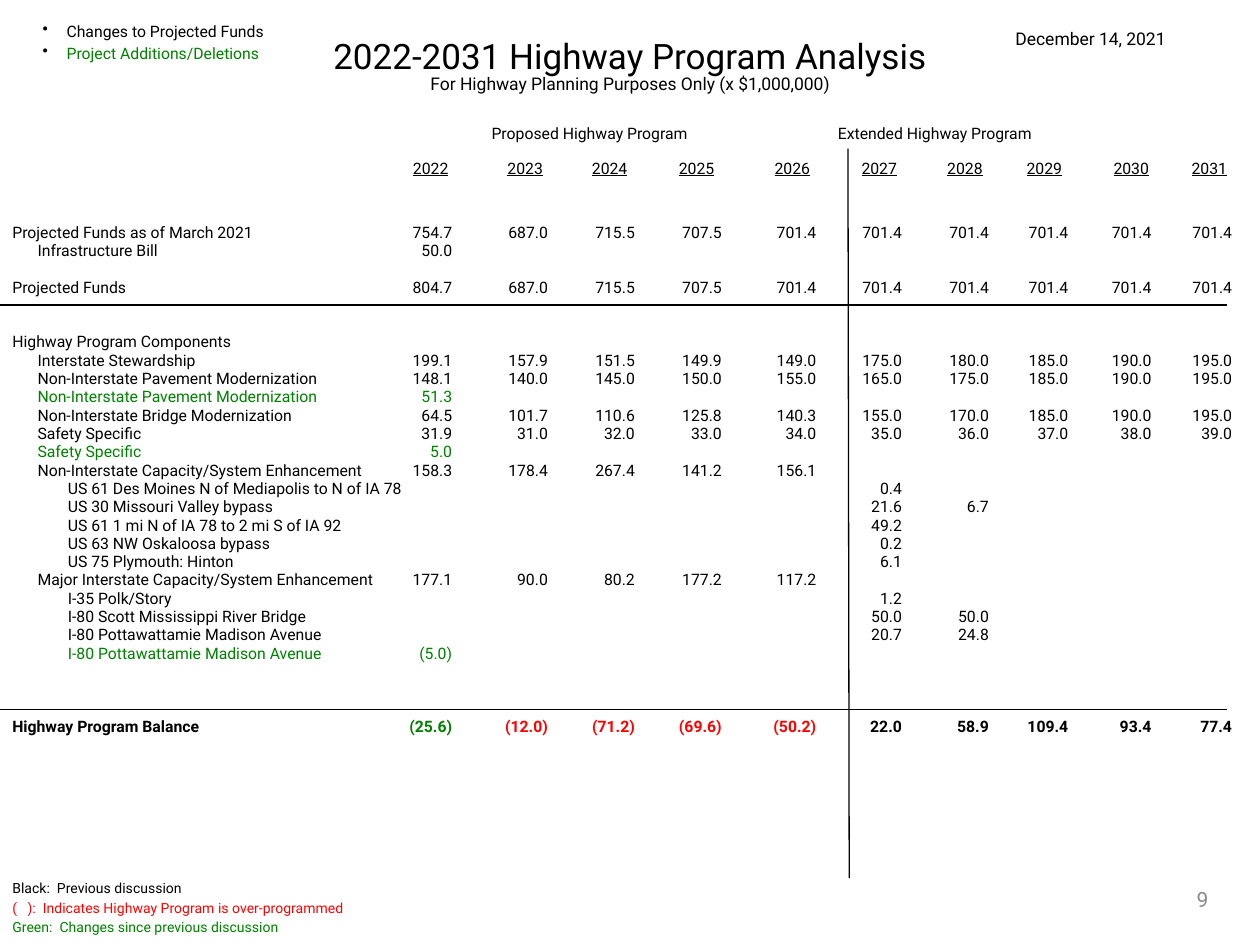
from pptx import Presentation
from pptx.dml.color import RGBColor
from pptx.enum.shapes import MSO_CONNECTOR
from pptx.enum.text import MSO_ANCHOR, MSO_AUTO_SIZE, PP_ALIGN
from pptx.oxml.ns import qn
from pptx.util import Inches, Pt
from lxml.etree import SubElement

BLACK, GREEN, RED, GREY = "000000", "008000", "FF0000", "8C8C8C"
ROW_PITCH = 10.47  # points

YEARS = [str(year) for year in range(2022, 2032)]
YEAR_STOPS = [3.32, 4.07, 4.74, 5.43, 6.19, 6.88, 7.56, 8.19, 8.88, 9.5]
VALUE_STOPS = [3.49, 4.25, 4.94, 5.63, 6.38, 7.06, 7.75, 8.38, 9.04, 9.68]
INDENT_STOPS = [0.2, 0.44]
EXTENDED = 5  # index of the first year of the extended program

# Blank rows above, indent level, label, first year column, values, colour
FUND_ROWS = [
    (0, 0, "Projected Funds as of March 2021", 0,
     "754.7 687.0 715.5 707.5 701.4 701.4 701.4 701.4 701.4 701.4", BLACK),
    (0, 1, "Infrastructure Bill", 0, "50.0", BLACK),
    (1, 0, "Projected Funds", 0,
     "804.7 687.0 715.5 707.5 701.4 701.4 701.4 701.4 701.4 701.4", BLACK),
    (2, 0, "Highway Program Components", 0, "", BLACK),
    (0, 1, "Interstate Stewardship", 0,
     "199.1 157.9 151.5 149.9 149.0 175.0 180.0 185.0 190.0 195.0", BLACK),
    (0, 1, "Non-Interstate Pavement Modernization", 0,
     "148.1 140.0 145.0 150.0 155.0 165.0 175.0 185.0 190.0 195.0", BLACK),
    (0, 1, "Non-Interstate Pavement Modernization", 0, "51.3", GREEN),
    (0, 1, "Non-Interstate Bridge Modernization", 0,
     "64.5 101.7 110.6 125.8 140.3 155.0 170.0 185.0 190.0 195.0", BLACK),
    (0, 1, "Safety Specific", 0,
     "31.9 31.0 32.0 33.0 34.0 35.0 36.0 37.0 38.0 39.0", BLACK),
    (0, 1, "Safety Specific", 0, "5.0", GREEN),
    (0, 1, "Non-Interstate Capacity/System Enhancement", 0,
     "158.3 178.4 267.4 141.2 156.1", BLACK),
    (0, 2, "US 61 Des Moines N of Mediapolis to N of IA 78", EXTENDED, "0.4", BLACK),
    (0, 2, "US 30 Missouri Valley bypass", EXTENDED, "21.6 6.7", BLACK),
    (0, 2, "US 61 1 mi N of IA 78 to 2 mi S of IA 92", EXTENDED, "49.2", BLACK),
    (0, 2, "US 63 NW Oskaloosa bypass", EXTENDED, "0.2", BLACK),
    (0, 2, "US 75 Plymouth: Hinton", EXTENDED, "6.1", BLACK),
    (0, 1, "Major Interstate Capacity/System Enhancement", 0,
     "177.1 90.0 80.2 177.2 117.2", BLACK),
    (0, 2, "I-35 Polk/Story", EXTENDED, "1.2", BLACK),
    (0, 2, "I-80 Scott Mississippi River Bridge", EXTENDED, "50.0 50.0", BLACK),
    (0, 2, "I-80 Pottawattamie Madison Avenue", EXTENDED, "20.7 24.8", BLACK),
    (0, 2, "I-80 Pottawattamie Madison Avenue", 0, "(5.0)", GREEN),
]
BALANCE = [
    ("Highway Program Balance", BLACK),
    ("\t(25.6)", GREEN),
    ("\t(12.0)\t(71.2)\t(69.6)\t(50.2)", RED),
    ("\t22.0\t58.9\t109.4\t93.4\t77.4", BLACK),
]


def rgb(color):
    return RGBColor.from_string(color)


def set_tabs(p, stops, align):
    """Set the indent stops to the left, then the given stops with align."""
    tab_list = SubElement(p._p.get_or_add_pPr(), qn("a:tabLst"))
    for pos, kind in stops_with_kind(stops, align):
        SubElement(tab_list, qn("a:tab"), pos=str(Inches(pos)), algn=kind)


def stops_with_kind(stops, align):
    indents = INDENT_STOPS if align == "r" else []
    return [(pos, "l") for pos in indents] + [(pos, align) for pos in stops]


def set_bullet(p, indent):
    pPr = p._p.get_or_add_pPr()
    pPr.set("marL", str(Inches(indent)))
    pPr.set("indent", str(-Inches(indent)))
    color = SubElement(pPr, qn("a:buClr"))
    SubElement(color, qn("a:srgbClr"), val=BLACK)
    SubElement(pPr, qn("a:buChar"), char="•")


class SlideBuilder:
    font = "Roboto"

    def __init__(self, slide):
        self.s = slide

    def frame(self, sp, top_inset, anchor):
        tf = sp.text_frame
        tf.word_wrap = True
        tf.auto_size = MSO_AUTO_SIZE.NONE
        tf.vertical_anchor = anchor
        tf.margin_top = Inches(top_inset)
        return tf

    def title(self, left, top, width, height, top_inset):
        sp = self.s.shapes.title
        sp.left, sp.top = Inches(left), Inches(top)
        sp.width, sp.height = Inches(width), Inches(height)
        return self.frame(sp, top_inset, MSO_ANCHOR.TOP)

    def box(self, left, top, width, height, top_inset=0.05, anchor=MSO_ANCHOR.TOP):
        sp = self.s.shapes.add_textbox(
            Inches(left), Inches(top), Inches(width), Inches(height))
        return self.frame(sp, top_inset, anchor)

    def paragraph(self, tf, align=PP_ALIGN.LEFT, before=0, pitch=None):
        """Return the frame's first paragraph if unused, else a new one."""
        first = tf.paragraphs[0]
        p = tf.add_paragraph() if first.runs else first
        p.alignment = align
        p.space_before = Pt(before)
        if pitch:
            p.line_spacing = Pt(pitch)
        return p

    def run(self, p, text, size=9, color=BLACK, bold=False, underline=False):
        r = p.add_run()
        r.text = text
        r.font.name = self.font
        r.font.size = Pt(size)
        r.font.bold = bold
        r.font.underline = underline
        r.font.color.rgb = rgb(color)

    def line(self, x1, y1, x2, y2):
        c = self.s.shapes.add_connector(
            MSO_CONNECTOR.STRAIGHT, Inches(x1), Inches(y1), Inches(x2), Inches(y2))
        c.line.color.rgb = rgb(BLACK)
        c.line.width = Pt(0.75)
        SubElement(c._element.spPr, qn("a:effectLst"))


def add_funds(b):
    tf = b.box(0, 1.57, 10, 4.8, top_inset=0.2)
    tf.margin_right = 0
    for blanks, level, label, start, values, color in FUND_ROWS:
        p = b.paragraph(tf, before=blanks * ROW_PITCH, pitch=ROW_PITCH)
        set_tabs(p, VALUE_STOPS, "r")
        cells = [""] * start + values.split()
        b.run(p, "\t" * level + "\t".join([label] + cells), color=color)
    p = b.paragraph(tf, before=3 * ROW_PITCH, pitch=ROW_PITCH)
    set_tabs(p, VALUE_STOPS, "r")
    for text, color in BALANCE:
        b.run(p, text, color=color, bold=True)


def add_year_header(b):
    tf = b.box(0, 0.99, 10, 0.49, top_inset=0)
    tf.margin_right = 0
    p = b.paragraph(tf, pitch=ROW_PITCH)
    set_tabs(p, [4.58, 7.32], "ctr")
    b.run(p, "\tProposed Highway Program\tExtended Highway Program")
    p = b.paragraph(tf, before=9.2, pitch=ROW_PITCH)
    set_tabs(p, YEAR_STOPS, "ctr")
    for year in YEARS:
        b.run(p, "\t")
        b.run(p, year, underline=True)


def main():
    prs = Presentation()
    prs.slide_width, prs.slide_height = Inches(10), Inches(7.5)
    b = SlideBuilder(prs.slides.add_slide(prs.slide_layouts[5]))

    tf = b.title(0, 0.05, 10, 0.7, top_inset=0.25)
    for text, size, pitch in [
            ("2022-2031 Highway Program Analysis", 20, 22),
            ("For Highway Planning Purposes Only (x $1,000,000)", 10, 10.3)]:
        b.run(b.paragraph(tf, PP_ALIGN.CENTER, pitch=pitch), text, size)

    add_funds(b)
    add_year_header(b)
    for y in (2.42, 5.63):
        b.line(0, y, 9.74, y)
    b.line(6.74, 6.97, 6.73, 1.18)

    tf = b.box(7.36, 6.94, 2.33, 0.4, anchor=MSO_ANCHOR.MIDDLE)
    b.run(b.paragraph(tf, PP_ALIGN.RIGHT), "9", 12, GREY)

    tf = b.box(0, 6.93, 3.83, 0.56)
    for text, color in [
            ("Black:  Previous discussion", BLACK),
            ("(   ):  Indicates Highway Program is over-programmed", RED),
            ("Green:  Changes since previous discussion", GREEN)]:
        b.run(b.paragraph(tf, before=1.75), text, 8, color)

    tf = b.box(7.54, 0.17, 2.23, 0.27)
    b.run(b.paragraph(tf, PP_ALIGN.CENTER), "December 14, 2021", 10)

    tf = b.box(0.24, 0.12, 2.47, 0.8)
    for text, color in [("Changes to Projected Funds", BLACK),
                        ("Project Additions/Deletions", GREEN)]:
        p = b.paragraph(tf, before=2)
        set_bullet(p, 0.19)
        b.run(p, text, color=color)

    prs.save("out.pptx")


if __name__ == "__main__":
    main()
